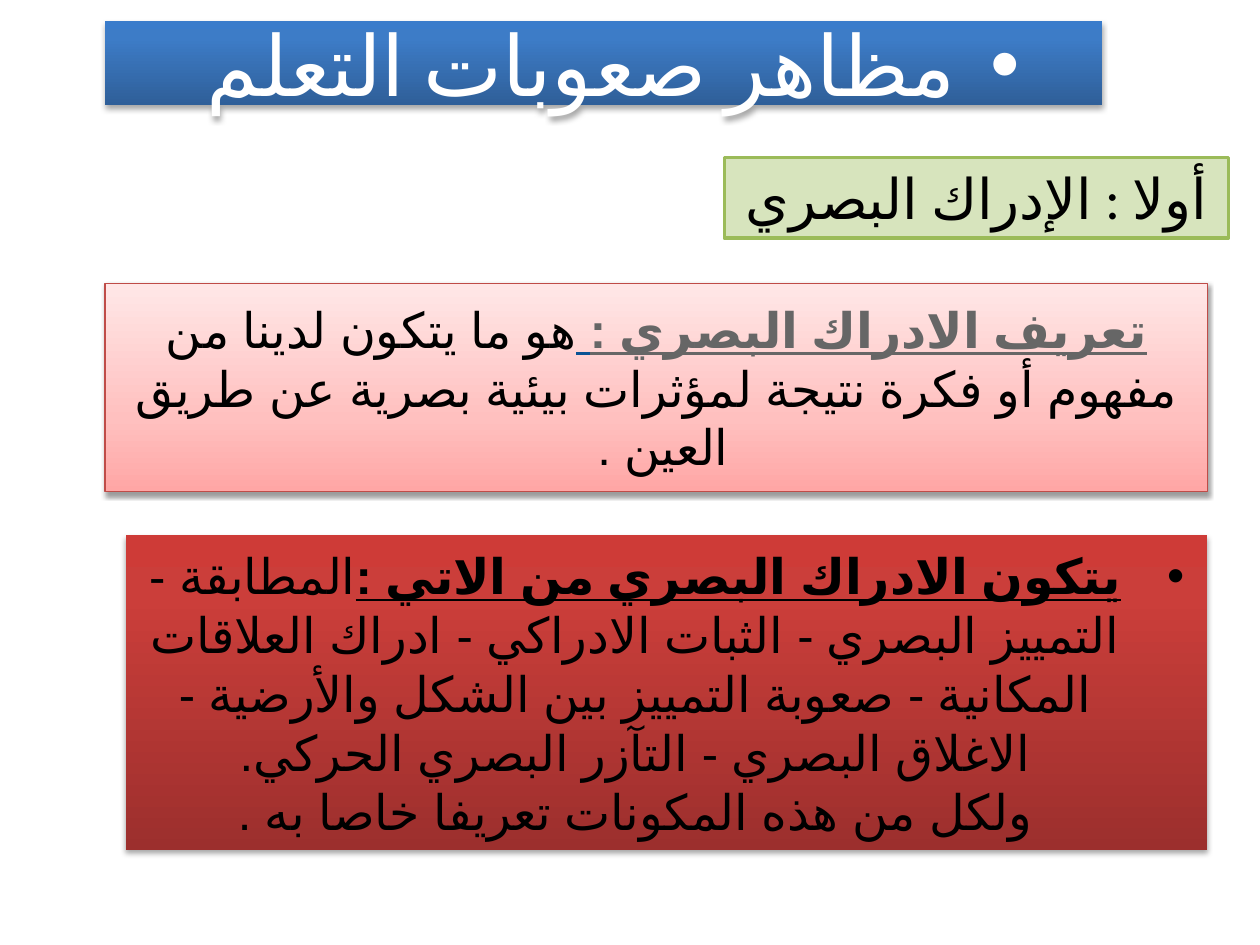
from dataclasses import dataclass

from lxml.etree import SubElement
from pptx import Presentation
from pptx.dml.color import RGBColor as RGB
from pptx.enum.lang import MSO_LANGUAGE_ID as LANG
from pptx.enum.shapes import MSO_SHAPE as SHAPE
from pptx.enum.text import MSO_ANCHOR as ANCHOR, MSO_AUTO_SIZE as AUTO, PP_ALIGN as ALIGN
from pptx.oxml.ns import qn
from pptx.util import Inches, Pt


@dataclass(frozen=True)
class Theme:
    heading_font: str = "Calibri"
    body_font: str = "Arial"
    title_size: int = 48
    heading_size: int = 32
    body_size: int = 28
    white: str = "FFFFFF"
    black: str = "000000"
    grey: str = "666666"
    navy: str = "0B5394"
    green_fill: str = "D7E4BD"
    green_line: str = "9BBB59"
    pink_line: str = "BF4C48"
    blue: tuple = ((0, "2F5F99"), (80, "3D7CC7"), (100, "3A7CCB"))
    pink: tuple = ((0, "FFA6A5"), (35, "FFC0BF"), (100, "FFE7E7"))
    red: tuple = ((0, "9C2F2D"), (80, "CB3E3A"), (100, "CE3B37"))


T = Theme()
CELL = Inches(10) / 120  # the slide is a grid of 120 columns and 90 rows


def add_panel(s, box, line=None, line_width=0.75):
    """Add a rectangle at box: column, row, columns wide, rows high."""
    sp = s.shapes.add_shape(SHAPE.RECTANGLE, *(round(n * CELL) for n in box))
    sp.shadow.inherit = False
    if line:
        sp.line.color.rgb = RGB.from_string(line)
        sp.line.width = Pt(line_width)
    else:
        sp.line.fill.background()
    tf = sp.text_frame
    tf.word_wrap = True
    tf.vertical_anchor = ANCHOR.MIDDLE
    return sp


def fill_gradient(sp, stops):
    """Run the stops from the bottom edge to the top."""
    sp.fill.gradient()
    sp.fill.gradient_angle = 90
    gs_list = sp._element.spPr.find(qn("a:gradFill")).find(qn("a:gsLst"))
    for gs in list(gs_list):
        gs_list.remove(gs)
    for position, color in stops:
        gs = SubElement(gs_list, qn("a:gs"), pos=str(position * 1000))
        SubElement(gs, qn("a:srgbClr"), val=color)


def add_shadow(sp, distance, opacity):
    effects = sp._element.spPr.find(qn("a:effectLst"))
    shadow = SubElement(effects, qn("a:outerShdw"), blurRad=str(Pt(3.1)),
                        dist=str(Pt(distance)), dir="5400000", rotWithShape="0")
    color = SubElement(shadow, qn("a:srgbClr"), val=T.black)
    SubElement(color, qn("a:alpha"), val=str(opacity * 1000))


def rtl_paragraph(sp, bullet=False):
    p = sp.text_frame.paragraphs[0]
    p.alignment = ALIGN.CENTER
    pPr = p._p.get_or_add_pPr()
    pPr.set("rtl", "1")
    if bullet:
        pPr.set("marL", str(Inches(0.5)))
        pPr.set("indent", str(-Inches(0.5)))
        SubElement(pPr, qn("a:buFont"), typeface=T.body_font)
        SubElement(pPr, qn("a:buChar"), char="•")
    return p


def add_run(p, text, color=T.black, size=T.body_size, font=T.body_font, strong=False):
    """Add an Arabic run; a strong one is bold and underlined."""
    r = p.add_run()
    r.text = text
    r.font.name = font
    r.font.size = Pt(size)
    r.font.bold = r.font.underline = strong
    r.font.color.rgb = RGB.from_string(color)
    r.font.language_id = LANG.ARABIC
    SubElement(r._r.get_or_add_rPr(), qn("a:cs"), typeface=font)


def add_heading(s, box):
    sp = add_panel(s, box, T.green_line, 2)
    sp.fill.solid()
    sp.fill.fore_color.rgb = RGB.from_string(T.green_fill)
    sp.text_frame.vertical_anchor = ANCHOR.TOP
    sp.text_frame.auto_size = AUTO.SHAPE_TO_FIT_TEXT
    add_run(rtl_paragraph(sp), "أولا : الإدراك البصري",
            size=T.heading_size, font=T.heading_font)


def add_definition(s, box):
    sp = add_panel(s, box, T.pink_line)
    fill_gradient(sp, T.pink)
    add_shadow(sp, 1.6, 38)
    p = rtl_paragraph(sp)
    add_run(p, "تعريف الادراك البصري :", T.grey, strong=True)
    add_run(p, " ", T.navy, strong=True)
    add_run(p, "هو ما يتكون لدينا من مفهوم أو فكرة نتيجة لمؤثرات بيئية بصرية عن طريق العين . ")


def add_components(s, box):
    sp = add_panel(s, box)
    fill_gradient(sp, T.red)
    add_shadow(sp, 1.8, 35)
    p = rtl_paragraph(sp, bullet=True)
    add_run(p, "يتكون الادراك البصري من الاتي :", strong=True)
    add_run(p, "المطابقة - التمييز البصري - الثبات الادراكي - ادراك العلاقات المكانية - "
               "صعوبة التمييز بين الشكل والأرضية - الاغلاق البصري - التآزر البصري الحركي.")
    p.add_line_break()
    add_run(p, "ولكل من هذه المكونات تعريفا خاصا به .")


def add_title(s, box):
    sp = add_panel(s, box)
    fill_gradient(sp, T.blue)
    add_shadow(sp, 1.8, 35)
    add_run(rtl_paragraph(sp, bullet=True), "مظاهر صعوبات التعلم ",
            T.white, T.title_size, T.heading_font)


def main():
    prs = Presentation()
    prs.slide_width, prs.slide_height = Inches(10), Inches(7.5)
    s = prs.slides.add_slide(prs.slide_layouts[6])
    add_heading(s, (69, 15, 48, 7.7))
    add_definition(s, (10, 27, 105, 19.8))
    add_components(s, (12, 51, 103, 30))
    add_title(s, (10, 2, 95, 8))
    prs.save("out.pptx")


if __name__ == "__main__":
    main()
